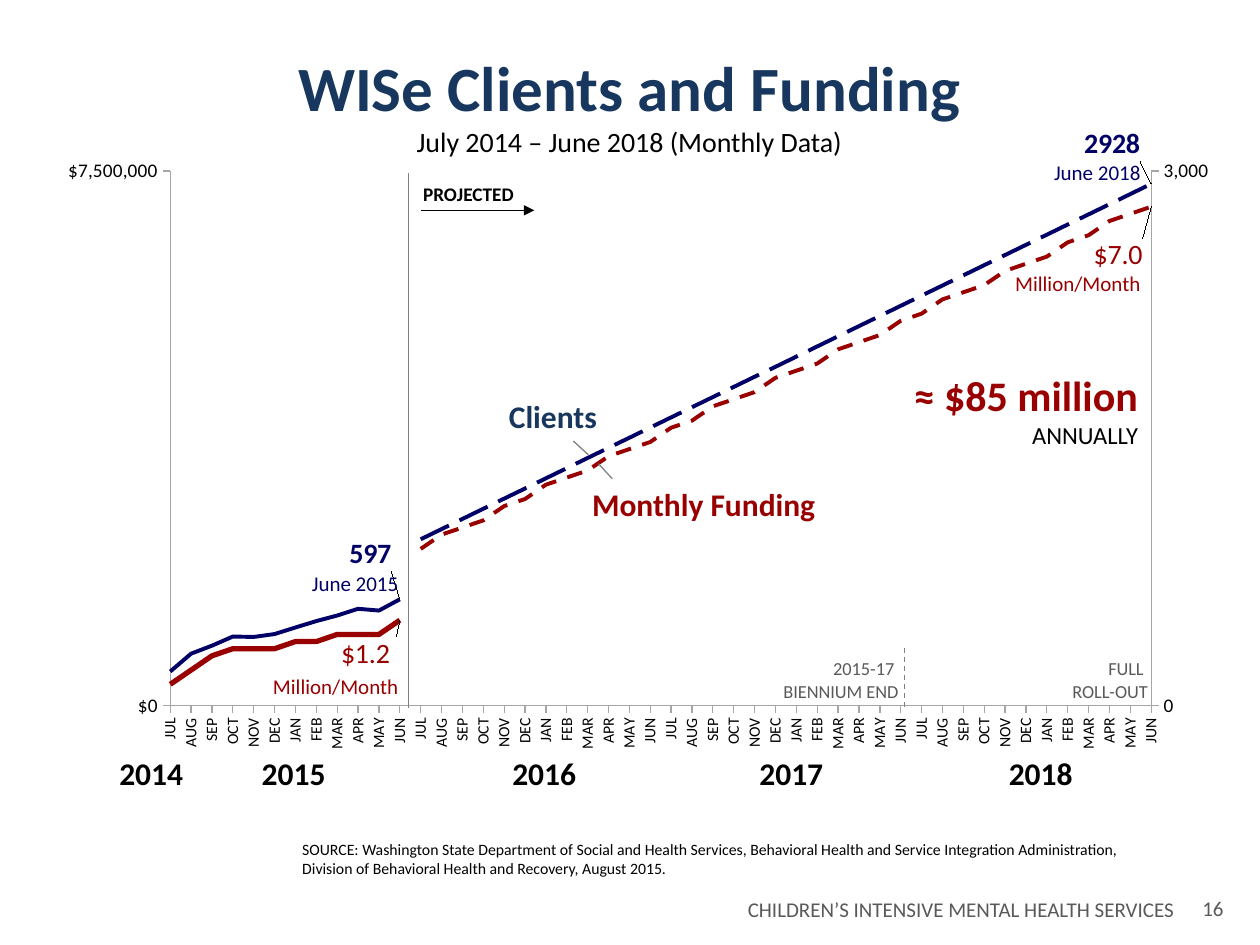
"""Builds the slide on clients and funding, with a chart on two axes."""
from copy import deepcopy
from dataclasses import dataclass

from lxml import etree
from pptx import Presentation
from pptx.chart import data as cd
from pptx.dml import color as dml
from pptx.enum import chart as ch, dml as lines, shapes, text
from pptx.oxml import ns, parse_xml
from pptx import util as u


@dataclass(frozen=True)
class Theme:
    """Holds the font, colours and type sizes of the slide."""
    font: str = "Calibri"
    navy: str = "17375E"
    blue: str = "000066"
    red: str = "990000"
    black: str = "000000"
    slate: str = "595959"
    gray: str = "808080"
    pale: str = "A6A6A6"
    title: float = 36
    total: float = 24
    head: float = 18
    sub: float = 16
    mid: float = 14
    body: float = 12
    axis: float = 11
    note: float = 10.5
    tiny: float = 9


T = Theme()
MONTHS = "JUL AUG SEP OCT NOV DEC JAN FEB MAR APR MAY JUN".split()
PAID = [3, 5, 7, 8, 8, 8, 9, 9, 10, 10, 10, 12]
PLAN = [22, 24, 25, 26, 28, 29, 31, 32, 33, 35, 36, 37, 39, 40, 42, 43, 44, 46,
        47, 48, 50, 51, 52, 54, 55, 57, 58, 59, 61, 62, 63, 65, 66, 68, 69, 70]
SERVED = [192, 292, 337, 388, 386, 402, 439, 475, 506, 544, 534, 597]
GOAL = [*range(934, 1847, 57), *range(1902, 2929, 57)]
LEFT, MID, RIGHT = text.PP_ALIGN.LEFT, text.PP_ALIGN.CENTER, text.PP_ALIGN.RIGHT
DASH = lines.MSO_LINE


def style(font, size, hue, bold=False):
    """Sets face, size, colour and weight of a font."""
    font.name, font.size, font.bold = T.font, u.Pt(size), bold
    font.color.rgb = dml.RGBColor.from_string(hue)


def stroke(line, hue, width, dash=None):
    """Sets colour, width and dash of a line."""
    line.color.rgb = dml.RGBColor.from_string(hue)
    line.width = u.Pt(width)
    if dash:
        line.dash_style = dash


def fill_text(frame, rows, align):
    """Writes rows of (words, size, colour, bold), one paragraph each."""
    for i, (words, *look) in enumerate(rows):
        para = frame.add_paragraph() if i else frame.paragraphs[0]
        para.alignment = align
        run = para.add_run()
        run.text = words
        style(run.font, *look)


def add_title(slide, box, rows):
    """Moves the title placeholder to the box and fills it."""
    shape = slide.shapes.title
    shape.left, shape.top, shape.width, shape.height = map(u.Pt, box)
    shape.text_frame.auto_size = text.MSO_AUTO_SIZE.NONE
    fill_text(shape.text_frame, rows, MID)


def add_label(slide, box, rows, align=LEFT, flush=False):
    """Adds a text box, with no inner margins when flush."""
    frame = slide.shapes.add_textbox(*map(u.Pt, box)).text_frame
    frame.word_wrap = True
    if flush:
        frame.margin_left = frame.margin_right = 0
        frame.margin_top = frame.margin_bottom = 0
    fill_text(frame, rows, align)


def add_line(slide, ends, hue, dash=None, arrow=False):
    """Adds a thin straight line, with an arrowhead on request."""
    line = slide.shapes.add_connector(shapes.MSO_CONNECTOR.STRAIGHT, *map(u.Pt, ends))
    stroke(line.line, hue, 0.75, dash)
    props = line.line._get_or_add_ln()
    if arrow:
        etree.SubElement(props, ns.qn("a:tailEnd"), type="triangle")
    etree.SubElement(line._element.spPr, ns.qn("a:effectLst"))


def layout(x, y, size=None):
    """Returns a manual layout, as an inner plot area when it has a size."""
    parts = [("layoutTarget", "inner"), ("xMode", "edge"), ("yMode", "edge")] if size else []
    parts += [("x", x), ("y", y)]
    parts += zip("wh", size or ())
    body = "".join(f'<c:{tag} val="{val}"/>' for tag, val in parts)
    return parse_xml(f'<c:layout {ns.nsdecls("c")}><c:manualLayout>{body}'
                     "</c:manualLayout></c:layout>")


def mark_point(series, index, shift, hue, bold=False, words=None):
    """Labels one point at a shift from its usual place, with a leader line."""
    label = series.points[index].data_label
    if words:
        fill_text(label.text_frame, [(words, T.sub, hue, bold)], LEFT)
    else:
        style(label.font, T.sub, hue, bold)
    label.position = ch.XL_LABEL_POSITION.RIGHT
    series.data_labels.show_value = False
    group = series.data_labels._element
    group.find(ns.qn("c:dLbl")).insert(1, layout(*shift))
    group.append(parse_xml(
        f'<c:extLst {ns.nsdecls("c")}><c:ext uri="{{CE6537A1-D6FC-4f65-9D91-7224C49458BB}}" '
        'xmlns:c15="http://schemas.microsoft.com/office/drawing/2012/chart">'
        '<c15:showLeaderLines val="1"/></c:ext></c:extLst>'))


def set_axis(axis, top, form):
    """Gives a value axis its range, number format and look."""
    axis.minimum_scale, axis.maximum_scale, axis.major_unit = 0, top, top
    axis.has_major_gridlines = False
    axis.major_tick_mark = ch.XL_TICK_MARK.OUTSIDE
    axis.tick_labels.number_format = form
    axis.tick_labels.number_format_is_linked = False
    style(axis.tick_labels.font, T.axis, T.black)
    stroke(axis.format.line, T.pale, 0.75)


def split_axes(chart):
    """Moves the last two series to a second pair of axes on the right."""
    area = chart._chartSpace.chart.plotArea
    first = area.find(ns.qn("c:lineChart"))
    other = deepcopy(first)
    first.addnext(other)
    for plot, drop in ((first, slice(2, 4)), (other, slice(0, 2))):
        for item in plot.findall(ns.qn("c:ser"))[drop]:
            plot.remove(item)
    pair = [area.find(ns.qn(tag)) for tag in ("c:catAx", "c:valAx")]
    codes = {axis.find(ns.qn("c:axId")).get("val"): code
             for axis, code in zip(pair, ("5001", "5002"))}
    twins = [deepcopy(axis) for axis in pair]
    for part in (other, *twins):
        for tag in ("c:axId", "c:crossAx"):
            for node in part.findall(ns.qn(tag)):
                node.set("val", codes[node.get("val")])
    pair[1].addnext(twins[1])
    twins[1].addnext(twins[0])
    twins[0].find(ns.qn("c:delete")).set("val", "1")
    twins[1].find(ns.qn("c:axPos")).set("val", "r")
    twins[1].find(ns.qn("c:crosses")).set("val", "max")
    twins[1].find(ns.qn("c:numFmt")).set("formatCode", "#,##0")
    for tag in ("c:max", "c:majorUnit"):
        next(twins[1].iter(ns.qn(tag))).set("val", "3000")


def add_graph(slide, box):
    """Adds the line chart of monthly funding and clients."""
    data = cd.CategoryChartData()
    data.categories = MONTHS * 4
    past, ahead = [None] * 12, [None] * 36
    rows = [[n * 100000 for n in PAID] + ahead, past + [n * 100000 for n in PLAN],
            SERVED + ahead, past + GOAL]
    for i, row in enumerate(rows, 1):
        data.add_series(f"Series {i}", row)
    chart = slide.shapes.add_chart(ch.XL_CHART_TYPE.LINE, *map(u.Pt, box), data).chart
    chart.has_legend = chart.has_title = False
    style(chart.font, T.head, T.black)
    chart.plots[0].vary_by_categories = False
    looks = [(T.red, 3, None), (T.red, 2.25, DASH.DASH),
             (T.blue, 2.25, None), (T.blue, 2.25, DASH.LONG_DASH)]
    marks = [(11, (-0.054, 0.052), T.red, False, "$1.2 "),
             (47, (-0.053, 0.075), T.red, False, "$7.0"),
             (11, (-0.047, -0.069), T.blue, True), (47, (-0.061, -0.061), T.blue, True)]
    for series, look, mark in zip(chart.plots[0].series, looks, marks):
        series.smooth = False
        series.marker.style = ch.XL_MARKER_STYLE.NONE
        stroke(series.format.line, *look)
        mark_point(series, *mark)
    months = chart.category_axis
    months.major_tick_mark = ch.XL_TICK_MARK.OUTSIDE
    style(months.tick_labels.font, T.tiny, T.black)
    stroke(months.format.line, T.pale, 0.75)
    months._element.txPr.bodyPr.set("rot", "-5400000")
    skip = parse_xml(f'<c:tickLblSkip {ns.nsdecls("c")} val="1"/>')
    months._element.find(ns.qn("c:noMultiLvlLbl")).addprevious(skip)
    set_axis(chart.value_axis, 7500000, '"$"#,##0')
    value = chart.value_axis._element
    cross = value.find(ns.qn("c:crossBetween"))
    if cross is None:
        cross = etree.Element(ns.qn("c:crossBetween"))
        value.find(ns.qn("c:crosses")).addnext(cross)
    cross.set("val", "midCat")
    area = chart._chartSpace.chart.plotArea
    for old in area.findall(ns.qn("c:layout")):
        area.remove(old)
    area.insert(0, layout(0.111, 0.079, (0.83, 0.821)))
    split_axes(chart)


def main():
    """Builds and saves the slide."""
    deck = Presentation()
    deck.slide_width, deck.slide_height = u.Pt(720), u.Pt(540)
    slide = deck.slides.add_slide(deck.slide_layouts[5])
    add_title(slide, (54, 23.8, 611.3, 70.6),
              [("WISe Clients and Funding", T.title, T.navy, True),
               ("July 2014 – June 2018 (Monthly Data)", T.sub, T.black)])
    add_graph(slide, (22.3, 68.4, 675.4, 372.2))
    for year, x in enumerate((61.2, 142.6, 285.8, 427, 569.5), 2014):
        add_label(slide, (x, 430.6, 50.4, 21.6), [(str(year), T.head, T.black, True)], MID, True)
    for words, box, size, hue, bold in (
            ("Monthly Funding", (331.2, 273.6, 144.7, 28.8), T.head, T.red, True),
            ("Clients", (283.7, 223.2, 72.7, 28.8), T.head, T.navy, True),
            ("PROJECTED", (234.7, 100.8, 88.6, 20.9), T.axis, T.black, True),
            ("SOURCE: Washington State Department of Social and Health Services, Behavioral "
             "Health and Service Integration Administration, Division of Behavioral Health and "
             "Recovery, August 2015.", (165.6, 476.6, 486, 28.8), T.tiny, T.black, False)):
        add_label(slide, box, [(words, size, hue, bold)])
    for words, x, y, wide, hue in (
            ("Million/Month", 123.1, 381.6, 111.6, T.red),
            ("Million/Month", 547.2, 151.2, 111.6, T.red),
            ("June 2015", 123.1, 322.6, 111.6, T.blue),
            ("June 2018", 547.2, 87.8, 111.6, T.blue),
            ("CHILDREN’S INTENSIVE MENTAL HEALTH SERVICES", 149, 509, 529.2, T.slate),
            ("16", 641.5, 508.3, 64.8, T.slate)):
        add_label(slide, (x, y, wide, 21.6), [(words, T.body, hue)], RIGHT)
    for rows, x, wide in ((("2015-17 ", "BIENNIUM END"), 412.6, 100.8),
                          (("FULL ", "ROLL-OUT"), 575.3, 80.6)):
        add_label(slide, (x, 375.8, wide, 25.2),
                  [(row, T.note, T.slate) for row in rows], RIGHT, True)
    add_label(slide, (464.4, 207.4, 193, 53.3),
              [("≈ $85 million", T.total, T.red, True), ("ANNUALLY", T.mid, T.black)], RIGHT)
    for ends in ((327.6, 252, 336.2, 259.9), (342, 265, 349.9, 273.6),
                 (233.3, 404.6, 233.3, 98.6)):
        add_line(slide, ends, T.gray)
    add_line(slide, (240.5, 120.2, 305.3, 120.2), T.black, arrow=True)
    add_line(slide, (517, 370.1, 517, 406.1), T.gray, DASH.DASH)
    deck.save("out.pptx")


if __name__ == "__main__":
    main()
